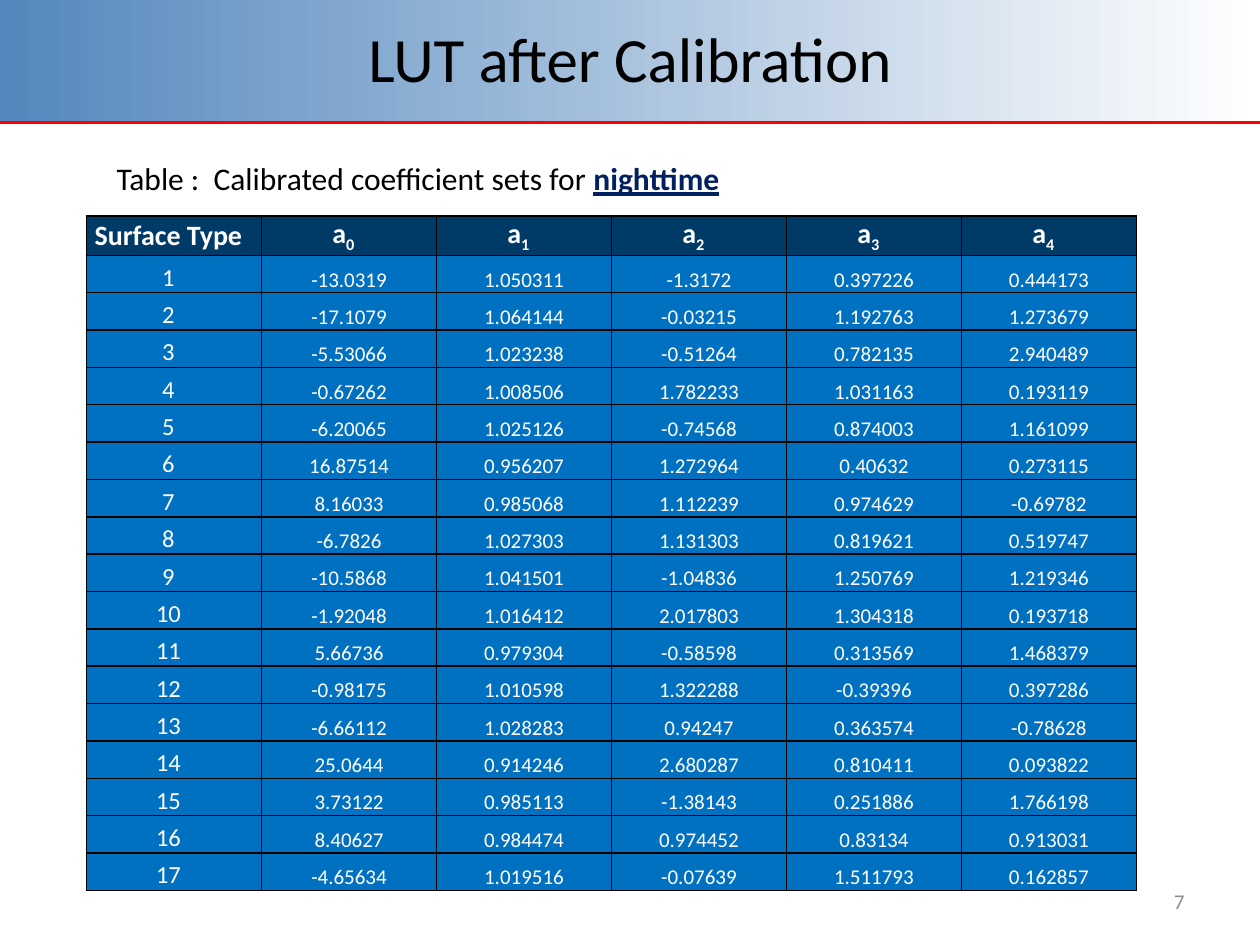
from lxml.etree import SubElement
from pptx import Presentation
from pptx.dml.color import RGBColor
from pptx.enum.shapes import MSO_CONNECTOR as Link, MSO_SHAPE as Shape
from pptx.enum.text import MSO_ANCHOR as Anchor, PP_ALIGN as Align
from pptx.oxml import parse_xml
from pptx.oxml.ns import nsdecls, qn
from pptx.util import Pt

# Content: a run is a text, or a text with its own format
TITLE = "LUT after Calibration"
CAPTION = ["Table :  Calibrated coefficient sets for ",
           ("nighttime", dict(color="002060", bold=True, line=True))]
PAGE = "7"
HEAD = ["Surface Type"] + [["a", (str(n), dict(base=-25))] for n in range(5)]
COEFFS = [
    ("-13.0319", "1.050311", "-1.3172", "0.397226", "0.444173"),
    ("-17.1079", "1.064144", "-0.03215", "1.192763", "1.273679"),
    ("-5.53066", "1.023238", "-0.51264", "0.782135", "2.940489"),
    ("-0.67262", "1.008506", "1.782233", "1.031163", "0.193119"),
    ("-6.20065", "1.025126", "-0.74568", "0.874003", "1.161099"),
    ("16.87514", "0.956207", "1.272964", "0.40632", "0.273115"),
    ("8.16033", "0.985068", "1.112239", "0.974629", "-0.69782"),
    ("-6.7826", "1.027303", "1.131303", "0.819621", "0.519747"),
    ("-10.5868", "1.041501", "-1.04836", "1.250769", "1.219346"),
    ("-1.92048", "1.016412", "2.017803", "1.304318", "0.193718"),
    ("5.66736", "0.979304", "-0.58598", "0.313569", "1.468379"),
    ("-0.98175", "1.010598", "1.322288", "-0.39396", "0.397286"),
    ("-6.66112", "1.028283", "0.94247", "0.363574", "-0.78628"),
    ("25.0644", "0.914246", "2.680287", "0.810411", "0.093822"),
    ("3.73122", "0.985113", "-1.38143", "0.251886", "1.766198"),
    ("8.40627", "0.984474", "0.974452", "0.83134", "0.913031"),
    ("-4.65634", "1.019516", "-0.07639", "1.511793", "0.162857"),
]
WIDE, HIGH = 720, 540
BAND = 70
COL, ROW = 100, 21.36


def paint(target, color):
    """Give a font, fill or line one plain colour."""
    if hasattr(target, "solid"):
        target.solid()
        target.fore_color.rgb = RGBColor.from_string(color)
    else:
        target.color.rgb = RGBColor.from_string(color)


def write(frame, text, align=Align.LEFT, **form):
    para = frame.paragraphs[0]
    para.alignment = align
    for part in [text] if isinstance(text, str) else text:
        words, own = (part, {}) if isinstance(part, str) else part
        look = {**form, **own}
        run = para.add_run()
        run.text = words
        font = run.font
        font.name, font.size = "Calibri", Pt(look["size"])
        font.bold = look.get("bold", False)
        font.underline = look.get("line", False)
        paint(font, look.get("color", "000000"))
        if "base" in look:
            run._r.get_or_add_rPr().set("baseline", str(look["base"] * 1000))


def label(slide, box, text, anchor=Anchor.TOP, **form):
    frame = slide.shapes.add_textbox(*map(Pt, box)).text_frame
    frame.word_wrap = True
    frame.vertical_anchor = anchor
    write(frame, text, **form)


def edge(cell, color, width):
    """Draw all four borders of a cell."""
    props = cell._tc.get_or_add_tcPr()
    for spot, side in enumerate("LRTB"):
        props.insert(spot, parse_xml(
            f'<a:ln{side} {nsdecls("a")} w="{Pt(width)}"><a:solidFill>'
            f'<a:srgbClr val="{color}"/></a:solidFill></a:ln{side}>'))


def banner(slide):
    band = slide.shapes.add_shape(Shape.RECTANGLE, 0, 0, Pt(WIDE), Pt(BAND))
    band.shadow.inherit = False
    band.line.fill.background()
    band.fill.gradient()
    band.fill.gradient_angle = 0
    for stop, color, spot in zip(band.fill.gradient_stops,
                                 ("5487BD", "FFFFFF"), (0, 1)):
        stop.color.rgb = RGBColor.from_string(color)
        stop.position = spot

    rule = slide.shapes.add_connector(Link.STRAIGHT, 0, Pt(BAND),
                                      Pt(WIDE), Pt(BAND))
    paint(rule.line, "FF0000")
    rule.line.width = Pt(1.25)
    SubElement(rule.element.spPr, qn("a:effectLst"))

    # The title goes in front of the band
    title = slide.shapes.title
    title.element.getparent().append(title.element)
    title.left, title.top, title.width, title.height = map(
        Pt, (36, 0, 648, 65))
    title.text_frame.vertical_anchor = Anchor.MIDDLE
    write(title.text_frame, TITLE, Align.CENTER, size=36)


def grid(slide):
    rows = [HEAD] + [(str(n), *row) for n, row in enumerate(COEFFS, 1)]
    table = slide.shapes.add_table(
        len(rows), len(HEAD), Pt(49.5), Pt(123.3),
        Pt(COL * len(HEAD)), Pt(ROW * len(rows))).table
    table.first_row = table.horz_banding = False
    for col in table.columns:
        col.width = Pt(COL)
    for r, row in enumerate(rows):
        table.rows[r].height = Pt(ROW)
        for c, text in enumerate(row):
            cell, top = table.cell(r, c), r == 0
            cell.margin_left = cell.margin_top = Pt(0.75)
            cell.margin_right = Pt(7.2 if top or c == 0 else 0.75)
            cell.margin_bottom = 0
            cell.vertical_anchor = Anchor.MIDDLE if top else Anchor.BOTTOM
            paint(cell.fill, "003B68" if top else "0070C0")
            edge(cell, "000000", 1)
            write(cell.text_frame, text, Align.CENTER, color="FFFFFF",
                  bold=top, size=16 if top else 14 if c == 0 else 12)


def main():
    deck = Presentation()
    deck.slide_width, deck.slide_height = Pt(WIDE), Pt(HIGH)
    slide = deck.slides.add_slide(deck.slide_layouts[5])
    banner(slide)
    label(slide, (59.5, 87.4, 611, 29), CAPTION, size=18)
    grid(slide)
    label(slide, (516, 500.5, 168, 28.75), PAGE, Anchor.MIDDLE,
          align=Align.RIGHT, size=12, color="8C8C8C")
    deck.save("out.pptx")


if __name__ == "__main__":
    main()
